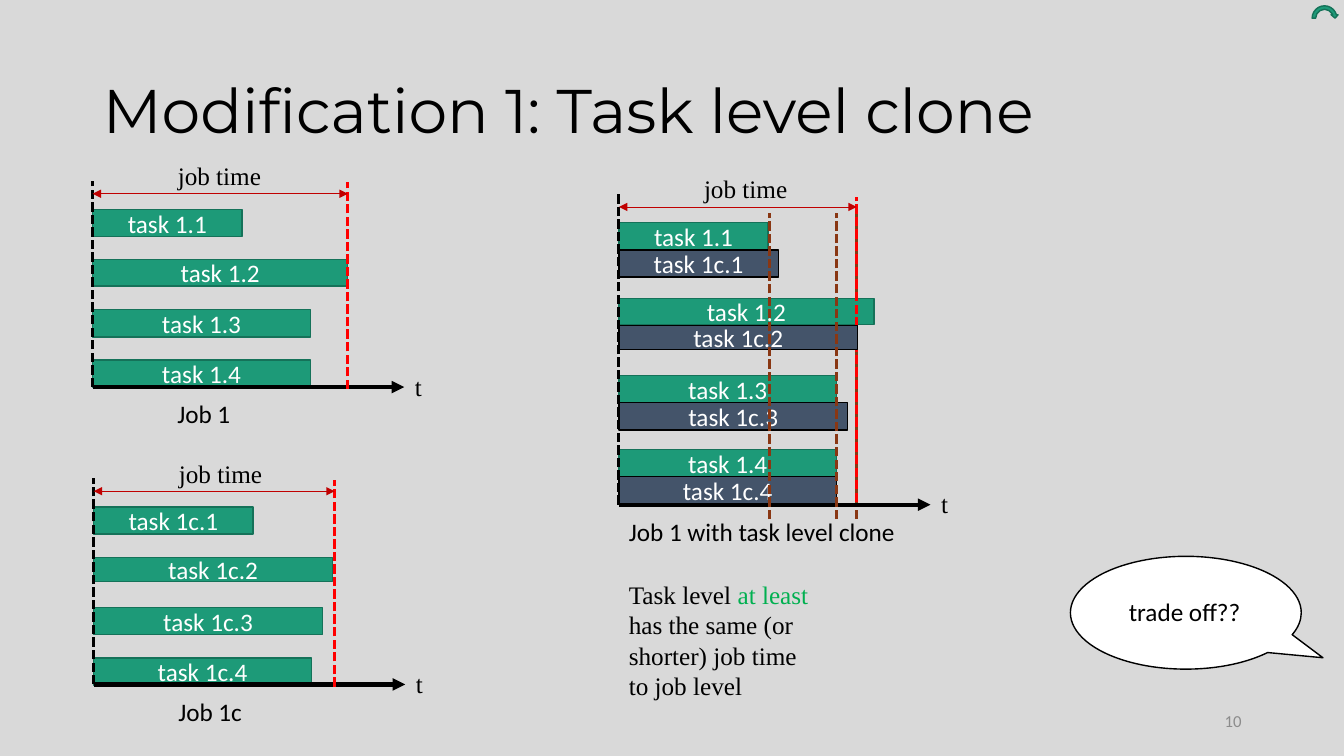
from dataclasses import dataclass

from pptx import Presentation
from pptx.dml.color import RGBColor
from pptx.enum.dml import MSO_LINE
from pptx.enum.shapes import MSO_CONNECTOR, MSO_SHAPE
from pptx.enum.text import MSO_ANCHOR, MSO_AUTO_SIZE, PP_ALIGN
from pptx.oxml.ns import qn
from pptx.shapes.autoshape import Shape
from pptx.slide import Slide
from pptx.text.text import TextFrame
from pptx.util import Pt
from lxml.etree import SubElement

BLACK = RGBColor(0x00, 0x00, 0x00)
WHITE = RGBColor(0xFF, 0xFF, 0xFF)
BACKDROP = RGBColor(0xD9, 0xD9, 0xD9)
GREEN = RGBColor(0x1D, 0x9A, 0x78)
DARK_GREEN = RGBColor(0x15, 0x72, 0x59)
SLATE = RGBColor(0x44, 0x54, 0x6A)
RED = RGBColor(0xFF, 0x00, 0x00)
DARK_RED = RGBColor(0xC0, 0x00, 0x00)
BROWN = RGBColor(0x89, 0x37, 0x13)
EMPHASIS = RGBColor(0x00, 0xB0, 0x50)
GREY = RGBColor(0x8C, 0x8C, 0x8C)

SANS, SERIF = "Calibri", "Times New Roman"
AXIS_LENGTH = 222.5
LABEL_HEIGHT = 28.8


@dataclass(frozen=True)
class Task:
    name: str
    top: float
    width: float
    height: float = 19.4
    fill: RGBColor = GREEN
    outline: RGBColor = DARK_GREEN


@dataclass(frozen=True)
class Timeline:
    caption: str
    left: float
    top: float
    axis: float
    job_time: float
    end_top: float
    end_bottom: float
    caption_indent: float
    caption_width: float
    tasks: tuple[Task, ...]
    clones: tuple[Task, ...] = ()


def tasks_at(prefix: str, tops: list[float], widths: list[float], heights: list[float],
             fill: RGBColor = GREEN, outline: RGBColor = DARK_GREEN) -> tuple[Task, ...]:
    return tuple(
        Task(f"task {prefix}.{number}", top, width, height, fill, outline)
        for number, (top, width, height) in enumerate(zip(tops, widths, heights), 1)
    )


def write(frame: TextFrame, pieces: list[tuple[str, RGBColor]], font: str = SANS,
          size: float = 18, align: PP_ALIGN = PP_ALIGN.LEFT) -> None:
    paragraph = frame.paragraphs[0]
    paragraph.alignment = align
    for words, colour in pieces:
        run = paragraph.add_run()
        run.text = words
        for attribute, value in {"name": font, "size": Pt(size), "bold": False}.items():
            setattr(run.font, attribute, value)
        run.font.color.rgb = colour


def add_label(shapes, left: float, top: float, width: float, height: float,
              pieces: list[tuple[str, RGBColor]], font: str = SANS) -> None:
    frame = shapes.add_textbox(Pt(left), Pt(top), Pt(width), Pt(height)).text_frame
    layout = {"word_wrap": True, "auto_size": MSO_AUTO_SIZE.SHAPE_TO_FIT_TEXT}
    for attribute, value in layout.items():
        setattr(frame, attribute, value)
    write(frame, pieces, font)


def add_figure(shapes, kind: MSO_SHAPE, left: float, top: float, width: float,
               height: float, fill: RGBColor, outline: RGBColor) -> Shape:
    figure = shapes.add_shape(kind, Pt(left), Pt(top), Pt(width), Pt(height))
    figure.shadow.inherit = False
    figure.fill.solid()
    figure.fill.fore_color.rgb = fill
    figure.line.color.rgb = outline
    figure.line.width = Pt(1)
    return figure


def add_line(shapes, start: tuple[float, float], end: tuple[float, float],
             colour: RGBColor, width: float, dashed: bool = False,
             arrows: tuple[str, ...] = ()) -> None:
    connector = shapes.add_connector(MSO_CONNECTOR.STRAIGHT, *map(Pt, start + end))
    connector.line.color.rgb = colour
    connector.line.width = Pt(width)
    if dashed:
        connector.line.dash_style = MSO_LINE.SQUARE_DOT
    properties = connector.element.spPr
    for arrow in arrows:
        SubElement(properties.find(qn("a:ln")), qn(f"a:{arrow}"), type="triangle")
    SubElement(properties, qn("a:effectLst"))


def add_tasks(shapes, left: float, tasks: tuple[Task, ...]) -> None:
    for task in tasks:
        bar = add_figure(shapes, MSO_SHAPE.RECTANGLE, left, task.top, task.width,
                         task.height, task.fill, task.outline)
        bar.text_frame.vertical_anchor = MSO_ANCHOR.MIDDLE
        write(bar.text_frame, [(task.name, WHITE)], align=PP_ALIGN.CENTER)


def add_timeline(slide: Slide, job: Timeline) -> None:
    shapes = slide.shapes.add_group_shape().shapes
    left, finish, span = job.left, job.left + job.job_time, job.top + 9.4
    add_tasks(shapes, left, job.tasks)
    # Axes and finish line
    add_line(shapes, (left, job.axis), (left + AXIS_LENGTH, job.axis), BLACK, 3,
             arrows=("tailEnd",))
    add_line(shapes, (left, job.axis), (left, job.top), BLACK, 2.25, dashed=True)
    add_line(shapes, (finish, job.end_bottom), (finish, job.end_top), RED, 2.25, dashed=True)
    add_line(shapes, (left, span), (finish, span), DARK_RED, 0.5,
             arrows=("headEnd", "tailEnd"))
    # Labels
    add_label(shapes, left + job.caption_indent, job.axis + 4.8, job.caption_width,
              LABEL_HEIGHT, [(job.caption, BLACK)])
    add_label(shapes, left + AXIS_LENGTH + 0.5, job.axis - 15, 29.5, LABEL_HEIGHT,
              [("t", BLACK)], SERIF)
    add_label(shapes, left + 53.7, job.top - 18, 81.4, LABEL_HEIGHT,
              [("job time", BLACK)], SERIF)
    add_tasks(shapes, left, job.clones)


# Bar sizes shared by the separate and the combined timelines
JOB_WIDTHS, JOB_HEIGHTS = [106.6, 182.2, 155.5, 155.5], [19.4, 18.7, 19.4, 19.4]
CLONE_WIDTHS, CLONE_HEIGHTS = [113.8, 170.6, 163.4, 155.5], [19.4, 17.3, 19.4, 19.4]
PAIR_TOPS = [159.1, 213.1, 268.3, 321.1]

TIMELINES = (
    Timeline("Job 1", 66.24, 129, 276.5, 182.2, 130.3, 277.9, 53.3, 78.5,
             tasks_at("1", [149.8 + 35.75 * row for row in range(4)],
                      JOB_WIDTHS, JOB_HEIGHTS)),
    Timeline("Job 1c", 66.96, 341.5, 488.9, 172.1, 343.2, 490.4, 53.3, 78.5,
             tasks_at("1c", [362.2 + 35.9 * row for row in range(4)],
                      CLONE_WIDTHS, CLONE_HEIGHTS)),
    Timeline("Job 1 with task level clone", 442.1, 138.4, 360.5, 169.9, 140.4, 358.6,
             0, 214.6,
             tasks_at("1", PAIR_TOPS, JOB_WIDTHS, JOB_HEIGHTS),
             tasks_at("1c", [top + 19.4 for top in PAIR_TOPS],
                      CLONE_WIDTHS, CLONE_HEIGHTS, SLATE, BLACK)),
)


def add_task_finish(slide: Slide, x: float) -> None:
    add_line(slide.shapes, (x, 370.8), (x, 151.9), BROWN, 2.25, dashed=True)


def main() -> None:
    presentation = Presentation()
    presentation.slide_width, presentation.slide_height = Pt(960), Pt(540)
    slide = presentation.slides.add_slide(presentation.slide_layouts[5])
    slide.background.fill.solid()
    slide.background.fill.fore_color.rgb = BACKDROP

    # Title
    title = slide.shapes.title
    place = {"left": Pt(66.24), "top": Pt(28.8), "width": Pt(828), "height": Pt(104.4)}
    for attribute, value in place.items():
        setattr(title, attribute, value)
    title.text_frame.vertical_anchor = MSO_ANCHOR.MIDDLE
    write(title.text_frame, [("Modification 1: Task level clone", BLACK)], "Montserrat", 44)
    title.text_frame.paragraphs[0].line_spacing = 0.9

    # Page number
    page = slide.shapes.add_textbox(Pt(678), Pt(500.4), Pt(216), Pt(28.8)).text_frame
    page.word_wrap = True
    page.vertical_anchor = MSO_ANCHOR.MIDDLE
    write(page, [("10", GREY)], size=12, align=PP_ALIGN.RIGHT)

    # Timelines, with the finish of each task marked on the combined one
    add_task_finish(slide, 612)
    for job in TIMELINES:
        add_timeline(slide, job)
    add_label(slide.shapes, 442.1, 410.4, 146.2, 94.3,
              [("Task level ", BLACK), ("at least ", EMPHASIS),
               ("has the same (or shorter) job time to job level", BLACK)], SERIF)
    for finish in (597.6, 549.4):
        add_task_finish(slide, finish)

    # Trade-off remark
    remark = add_figure(slide.shapes, MSO_SHAPE.OVAL_CALLOUT, 764.6, 397.4, 164.9, 80.6,
                        WHITE, BLACK)
    remark.adjustments[0], remark.adjustments[1] = 0.594, 0.399
    add_label(slide.shapes, 799.2, 422.6, 114.5, LABEL_HEIGHT, [("trade off??", BLACK)])

    # Return arrow
    add_figure(slide.shapes, MSO_SHAPE.CIRCULAR_ARROW, 936, 2.9, 20.2, 20.2,
               GREEN, DARK_GREEN)
    presentation.save("out.pptx")


if __name__ == "__main__":
    main()
